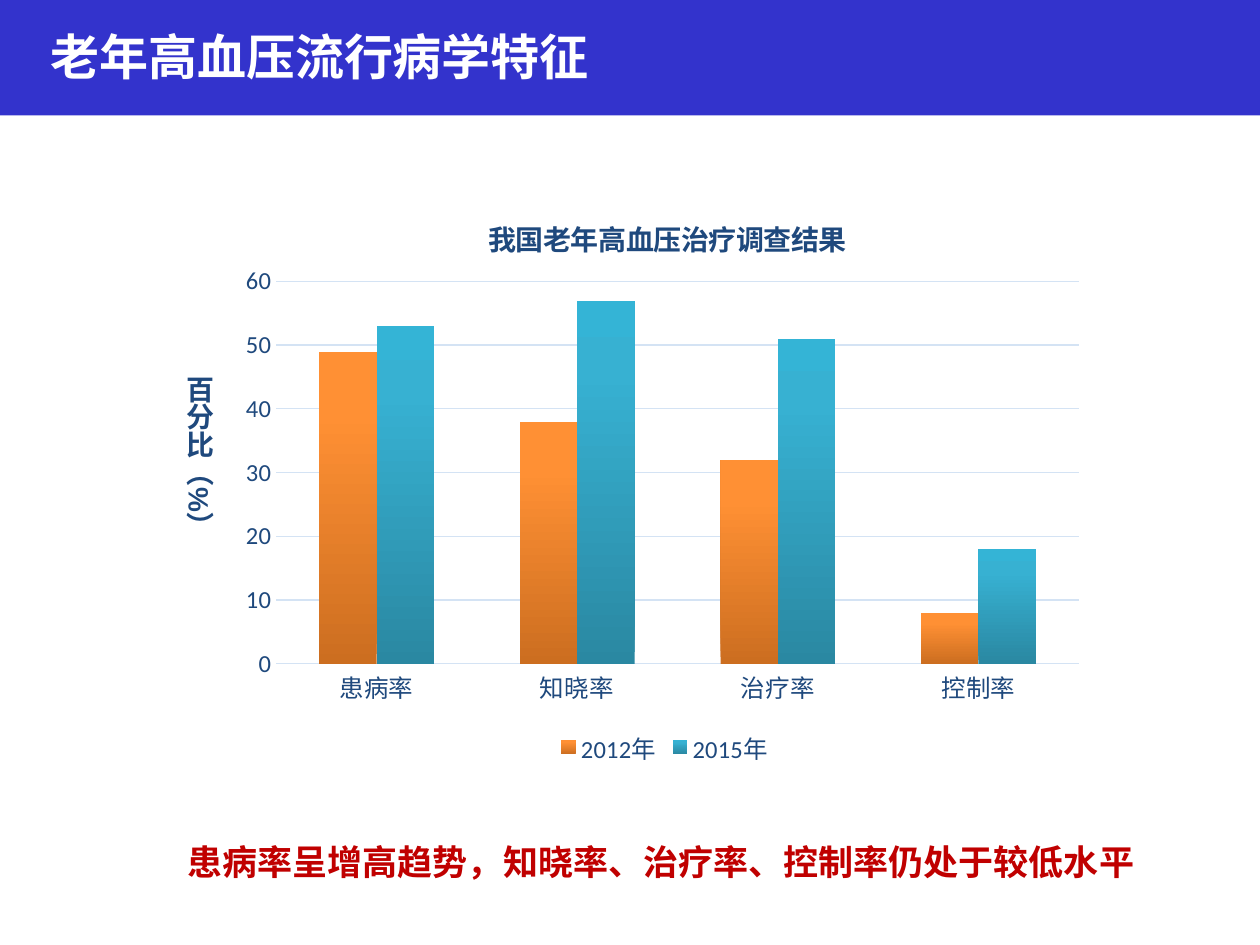
import copy

import pptx
import pptx.chart.data
import pptx.dml.color
import pptx.enum.chart
import pptx.enum.shapes
import pptx.enum.text
import pptx.oxml
import pptx.oxml.ns
import pptx.util

Pt = pptx.util.Pt
RGBColor = pptx.dml.color.RGBColor

BANNER_BLUE = RGBColor(0x33, 0x33, 0xCC)
WHITE = RGBColor(0xFF, 0xFF, 0xFF)
NAVY = RGBColor(0x1F, 0x49, 0x7D)
RED = RGBColor(0xC0, 0x00, 0x00)
PALE_BLUE = RGBColor(0xD4, 0xE3, 0xF4)
ORANGES = (RGBColor(0xCC, 0x6E, 0x20), RGBColor(0xFF, 0x90, 0x34), RGBColor(0xFF, 0x91, 0x36))
TEALS = (RGBColor(0x2A, 0x88, 0xA2), RGBColor(0x37, 0xB1, 0xD2), RGBColor(0x34, 0xB4, 0xD6))
GRADIENT_POSITIONS = (0, 0.8, 1)

CHINESE_FONT = "Noto Sans CJK SC"
CHART_FONT = "Calibri"
CATEGORIES = ("患病率", "知晓率", "治疗率", "控制率")
SERIES = (
    ("2012年", (49, 38, 32, 8), ORANGES),
    ("2015年", (53, 57, 51, 18), TEALS),
)


def format_font(font, name, size, color, bold=False):
    font.name = name
    font.size = Pt(size)
    font.bold = bold
    font.color.rgb = color


def add_text(slide, text, left, top, width, height, *, size, color,
             font_name=CHINESE_FONT, left_inset=7.2, vertical=False, fixed=False):
    shape = slide.shapes.add_textbox(Pt(left), Pt(top), Pt(width), Pt(height))
    frame = shape.text_frame
    frame.word_wrap = fixed
    frame.margin_left = Pt(left_inset)
    if fixed:
        frame.vertical_anchor = pptx.enum.text.MSO_ANCHOR.MIDDLE
    else:
        frame.auto_size = pptx.enum.text.MSO_AUTO_SIZE.SHAPE_TO_FIT_TEXT
    if vertical:
        frame._txBody.bodyPr.set("vert", "eaVert")
    run = frame.paragraphs[0].add_run()
    run.text = text
    format_font(run.font, font_name, size, color, bold=True)
    east_asian = pptx.oxml.parse_xml(
        f'<a:ea {pptx.oxml.ns.nsdecls("a")} typeface="{CHINESE_FONT}"/>')
    run._r.get_or_add_rPr().append(east_asian)


def add_banner(slide):
    shape = slide.shapes.add_shape(
        pptx.enum.shapes.MSO_SHAPE.RECTANGLE, Pt(0), Pt(0), Pt(720), Pt(66))
    shape.shadow.inherit = False
    shape.fill.solid()
    shape.fill.fore_color.rgb = BANNER_BLUE
    shape.line.fill.background()


def fill_gradient(series, colors):
    fill = series.format.fill
    fill.gradient()
    fill.gradient_angle = 90
    stop_list = series._element.xpath(".//a:gsLst")[0]
    stop_list.append(copy.deepcopy(stop_list[-1]))
    for stop, color, position in zip(fill.gradient_stops, colors, GRADIENT_POSITIONS):
        stop.color.rgb = color
        stop.position = position


def set_layout(element, **fractions):
    target = '<c:layoutTarget val="inner"/>' if "w" in fractions else ""
    modes = "".join(f'<c:{axis}Mode val="edge"/>' for axis in "xy")
    values = "".join(f'<c:{key} val="{value}"/>' for key, value in fractions.items())
    layout = pptx.oxml.parse_xml(
        f'<c:layout {pptx.oxml.ns.nsdecls("c")}><c:manualLayout>'
        f'{target}{modes}{values}</c:manualLayout></c:layout>')
    for old_layout in element.xpath("./c:layout"):
        element.remove(old_layout)
    following_text = element.xpath("./c:tx")
    element.insert(1 if following_text else 0, layout)


def format_axis(axis):
    axis.major_tick_mark = pptx.enum.chart.XL_TICK_MARK.NONE
    axis.minor_tick_mark = pptx.enum.chart.XL_TICK_MARK.NONE
    format_font(axis.tick_labels.font, CHART_FONT, 14, NAVY)


def format_line(line):
    line.color.rgb = PALE_BLUE
    line.width = Pt(0.75)


def add_survey_chart(slide):
    data = pptx.chart.data.CategoryChartData()
    data.categories = CATEGORIES
    for name, values, _ in SERIES:
        data.add_series(name, values)
    chart = slide.shapes.add_chart(
        pptx.enum.chart.XL_CHART_TYPE.COLUMN_CLUSTERED,
        Pt(133.2), Pt(103.7), Pt(493.2), Pt(336.2), data).chart
    chart.font.name = CHART_FONT
    chart.font.size = Pt(10)

    chart.has_title = True
    title_frame = chart.chart_title.text_frame
    title_frame.text = "我国老年高血压治疗调查结果"
    format_font(title_frame.paragraphs[0].runs[0].font, CHART_FONT, 16, NAVY, bold=True)
    chart.chart_title.include_in_layout = False
    set_layout(chart.chart_title._element, x=0.29, y=0.05)
    set_layout(chart._chartSpace.chart.plotArea, x=0.05, y=0.17, w=0.93, h=0.65)

    chart.has_legend = True
    chart.legend.position = pptx.enum.chart.XL_LEGEND_POSITION.BOTTOM
    chart.legend.include_in_layout = False
    format_font(chart.legend.font, CHART_FONT, 14, NAVY)

    format_axis(chart.category_axis)
    format_line(chart.category_axis.format.line)
    value_axis = chart.value_axis
    format_axis(value_axis)
    value_axis.format.line.fill.background()
    format_line(value_axis.major_gridlines.format.line)
    value_axis.minimum_scale = 0
    value_axis.maximum_scale = 60
    value_axis.major_unit = 10

    plot = chart.plots[0]
    plot.gap_width = 150
    plot.overlap = 0
    plot.vary_by_categories = False
    for series, (_, _, colors) in zip(plot.series, SERIES):
        fill_gradient(series, colors)


def main():
    presentation = pptx.Presentation()
    presentation.slide_width = Pt(720)
    presentation.slide_height = Pt(540)
    slide = presentation.slides.add_slide(presentation.slide_layouts[6])
    add_banner(slide)
    add_text(slide, "老年高血压流行病学特征", 2.9, 3.6, 612, 56.9,
             size=28, color=WHITE, left_inset=26, fixed=True)
    add_survey_chart(slide)
    add_text(slide, "百分比（%）", 93.6, 207.4, 33.8, 95,
             size=16, color=NAVY, font_name="Arial", vertical=True)
    add_text(slide, "患病率呈增高趋势，知晓率、治疗率、控制率仍处于较低水平",
             100.1, 476.6, 560.2, 31.7, size=20, color=RED)
    presentation.save("out.pptx")


if __name__ == "__main__":
    main()
